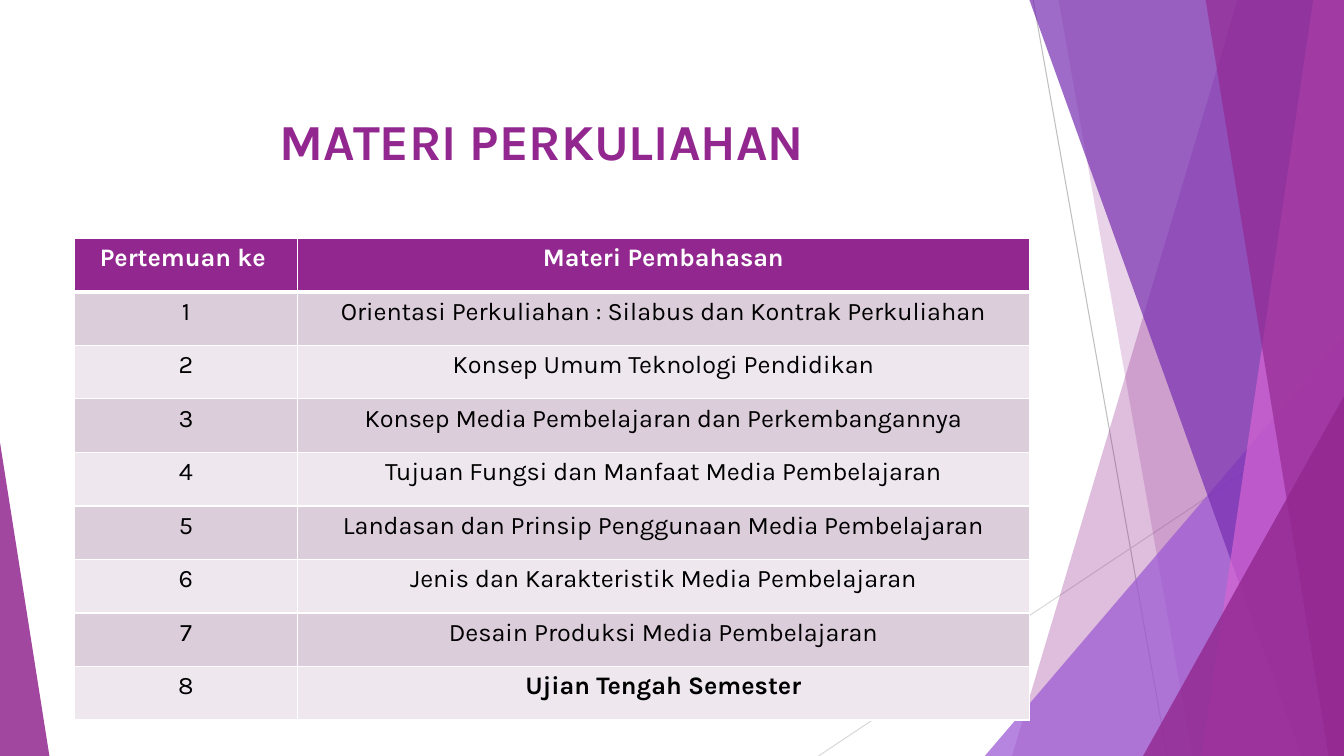
"""Build the course material slide with its faceted backdrop and meeting table."""
from dataclasses import dataclass

from lxml.etree import SubElement
from pptx import Presentation as new_presentation
from pptx.dml.color import RGBColor
from pptx.enum.shapes import MSO_CONNECTOR as Connector, MSO_SHAPE as Shape
from pptx.enum.text import MSO_ANCHOR as Anchor, PP_ALIGN as Align
from pptx.oxml import parse_xml
from pptx.oxml.ns import nsdecls, qn
from pptx.util import Pt

WIDTH, HEIGHT = 960, 540
FACET_TOP = -0.6
FONT = "Karla"
ROW_HEIGHT = 38.24
COLUMN_WIDTHS = (159.1, 523)
COLORS = {
    "purple": "92278F",
    "lavender": "9B57D3",
    "violet": "762EB1",
    "pink": "D665D3",
    "white": "FFFFFF",
    "black": "000000",
    "dark_band": "DCCDDB",
    "light_band": "EEE8EE",
    "gray": "BFBFBF",
    "light_gray": "D9D9D9",
}


@dataclass
class Line:
    start: tuple[float, float]
    end: tuple[float, float]
    color: str


@dataclass
class Facet:
    top_left: float
    bottom_left: float
    color: str
    opacity: int


@dataclass
class Triangle:
    left: float
    width: float
    height: float
    apex: float
    color: str
    opacity: int


LINES = [
    Line((738, 0), (833.76, HEIGHT), "gray"),
    Line((WIDTH, 290.16), (584.64, HEIGHT), "light_gray"),
]
BACKDROP = [
    Facet(884.16, 722.88, "purple", 30),
    Facet(756, 851.76, "purple", 20),
    Triangle(703.44, 256.56, 300.24, 1, "lavender", 72),
    Facet(735.12, 929.52, "violet", 70),
    Facet(938.16, 858.24, "pink", 70),
    Facet(861.12, 948.96, "purple", 65),
    Triangle(816.48, 143.52, 257.04, 1, "purple", 80),
    Triangle(0, 35.28, 223.92, 0, "purple", 85),
]
HEADER = ("Pertemuan ke ", "Materi Pembahasan")
TOPICS = [
    "Orientasi Perkuliahan : Silabus dan Kontrak Perkuliahan",
    "Konsep Umum Teknologi Pendidikan",
    "Konsep Media Pembelajaran dan Perkembangannya",
    "Tujuan Fungsi dan Manfaat Media Pembelajaran",
    "Landasan dan Prinsip Penggunaan Media Pembelajaran",
    "Jenis dan Karakteristik Media Pembelajaran",
    "Desain Produksi Media Pembelajaran",
    "Ujian Tengah Semester",
]


def rgb(name: str) -> RGBColor:
    return RGBColor.from_string(COLORS[name])


def draw_line(slide, line: Line) -> None:
    connector = slide.shapes.add_connector(
        Connector.STRAIGHT, *map(Pt, line.start + line.end))
    connector.line.color.rgb = rgb(line.color)
    connector.line.width = Pt(0.75)
    SubElement(connector._element.spPr, qn("a:effectLst"))


def draw_backdrop(slide, part: Facet | Triangle) -> None:
    if isinstance(part, Facet):
        builder = slide.shapes.build_freeform(Pt(part.top_left), Pt(FACET_TOP))
        corners = [(WIDTH, FACET_TOP), (WIDTH, HEIGHT), (part.bottom_left, HEIGHT)]
        builder.add_line_segments([(Pt(x), Pt(y)) for x, y in corners])
        shape = builder.convert_to_shape()
    else:
        shape = slide.shapes.add_shape(
            Shape.ISOSCELES_TRIANGLE, Pt(part.left), Pt(HEIGHT - part.height),
            Pt(part.width), Pt(part.height))
        shape.adjustments[0] = part.apex
    shape.shadow.inherit = False
    shape.line.fill.background()
    shape.fill.solid()
    shape.fill.fore_color.rgb = rgb(part.color)
    color = shape._element.spPr.find(qn("a:solidFill"))[0]
    SubElement(color, qn("a:alpha"), val=str(part.opacity * 1000))


def write_text(text_frame, text: str, size: float, color: str, bold: bool) -> None:
    paragraph = text_frame.paragraphs[0]
    paragraph.alignment = Align.CENTER
    run = paragraph.add_run()
    run.text = text
    run.font.name = FONT
    run.font.size = Pt(size)
    run.font.bold = bold
    run.font.color.rgb = rgb(color)


def draw_title(slide) -> None:
    title = slide.shapes.add_textbox(Pt(53.28), Pt(48.24), Pt(676.8), Pt(103.68))
    title.text_frame.word_wrap = True
    title.text_frame.vertical_anchor = Anchor.MIDDLE
    write_text(title.text_frame, "MATERI PERKULIAHAN ", 36, "purple", True)


def set_borders(cell, top: float, bottom: float) -> None:
    properties = cell._tc.get_or_add_tcPr()
    widths = {"lnL": 1, "lnR": 1, "lnT": top, "lnB": bottom}
    for position, (side, width) in enumerate(widths.items()):
        properties.insert(position, parse_xml(
            f'<a:{side} {nsdecls("a")} w="{Pt(width)}"><a:solidFill>'
            f'<a:srgbClr val="{COLORS["white"]}"/></a:solidFill></a:{side}>'))


def draw_table(slide) -> None:
    rows = [HEADER] + [(str(number), topic) for number, topic in enumerate(TOPICS, 1)]
    table = slide.shapes.add_table(
        len(rows), len(HEADER), Pt(53.28), Pt(170.2),
        Pt(sum(COLUMN_WIDTHS)), Pt(ROW_HEIGHT * len(rows))).table
    table.horz_banding = False
    for column, width in zip(table.columns, COLUMN_WIDTHS):
        column.width = Pt(width)
    for index, texts in enumerate(rows):
        table.rows[index].height = Pt(ROW_HEIGHT)
        is_header = index == 0
        band = "purple" if is_header else "dark_band" if index % 2 else "light_band"
        for cell, text in zip(table.rows[index].cells, texts):
            cell.fill.solid()
            cell.fill.fore_color.rgb = rgb(band)
            set_borders(cell, 3 if index == 1 else 1, 3 if is_header else 1)
            write_text(cell.text_frame, text, 18, "white" if is_header else "black",
                       is_header or text == TOPICS[-1])


def main() -> None:
    presentation = new_presentation()
    presentation.slide_width, presentation.slide_height = Pt(WIDTH), Pt(HEIGHT)
    slide = presentation.slides.add_slide(presentation.slide_layouts[6])
    for line in LINES:
        draw_line(slide, line)
    for part in BACKDROP:
        draw_backdrop(slide, part)
    draw_title(slide)
    draw_table(slide)
    presentation.save("out.pptx")


if __name__ == "__main__":
    main()
